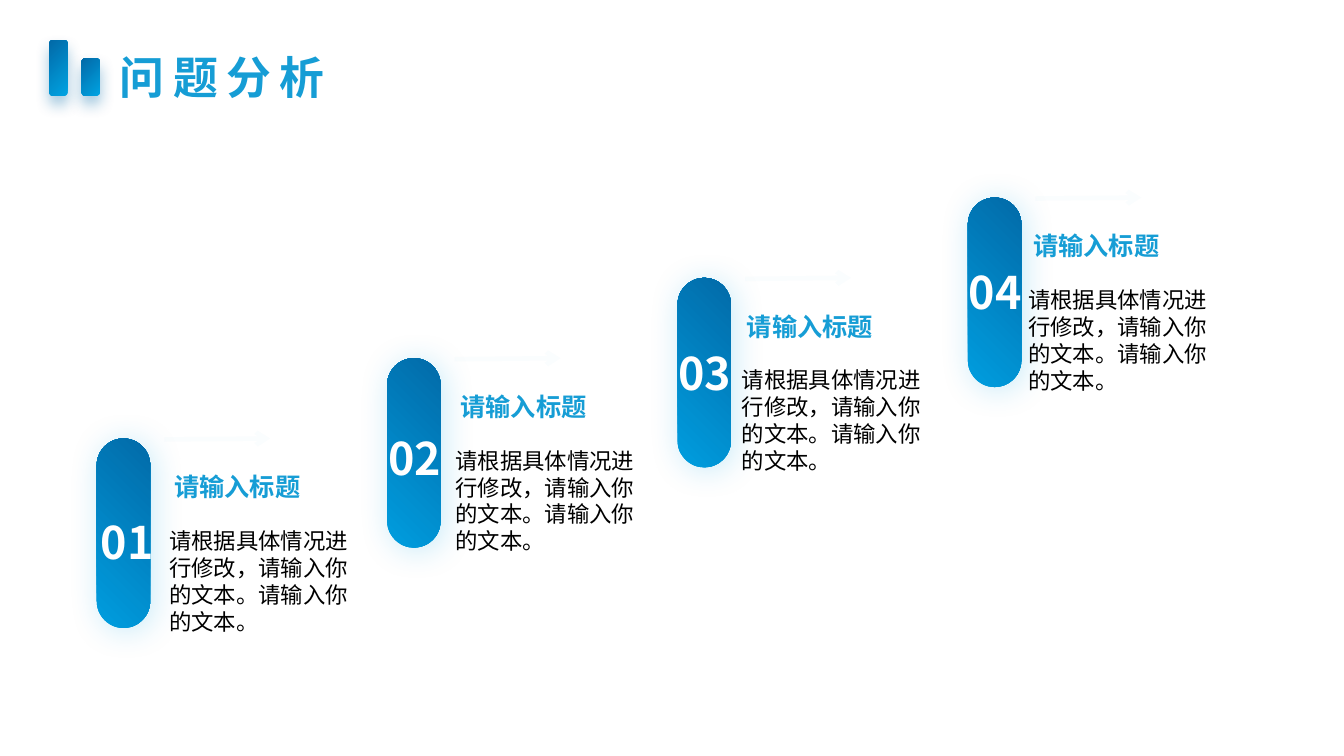
from lxml import etree
from pptx import Presentation
from pptx.dml.color import RGBColor
from pptx.enum.shapes import MSO_CONNECTOR, MSO_SHAPE
from pptx.enum.text import MSO_AUTO_SIZE
from pptx.oxml.ns import qn
from pptx.util import Inches, Pt

ROUNDED = MSO_SHAPE.ROUNDED_RECTANGLE
STRAIGHT = MSO_CONNECTOR.STRAIGHT
GROW = MSO_AUTO_SIZE.SHAPE_TO_FIT_TEXT
FONT = "Noto Sans CJK SC"

# Content
HEADING = "问题分析"
STEP_TITLE = "请输入标题"
STEP_BODY = "请根据具体情况进行修改，请输入你的文本。请输入你的文本。"
# Number, its left and top
STEPS = [("01", 0.9, 5.06), ("02", 3.75, 4.22), ("03", 6.63, 3.38), ("04", 9.51, 2.58)]
HEADING_BARS = [(0.49, 0.4, 0.18, 0.55), (0.81, 0.58, 0.18, 0.37)]

# Layout of the staircase
PILL_LEFT, PILL_TOP, PILL_PITCH = 0.96, 4.35, 2.88
TEXT_LEFT, TEXT_PITCH = 1.63, 2.84
RISE = 2.39 / (len(STEPS) - 1)

# Formats
HEADING_FONT = {"size": Pt(32), "bold": True, "color": "169DD5"}
NUMBER_FONT = {"size": Pt(32), "bold": True, "color": "FFFFFF"}
TITLE_FONT = {"size": Pt(18), "bold": True, "color": "169DD5"}
BODY_FONT = {"size": Pt(16), "bold": False, "color": "000000"}
PILL_STYLE = {"colors": ("009EDF", "026AA8"), "angle": 315, "radius": 0.5,
              "shadow": ("00A3E2", 21, 24, 3, 45)}
BAR_STYLE = {"colors": ("00A3E2", "026AA8"), "angle": 45, "radius": 0.1667,
             "shadow": ("026AA8", 40, 11, 6, 90)}
ARROW_COLOR, ARROW_OPACITY = "00A3E2", 2


def rgb(value):
    return RGBColor.from_string(value)


def add_child(parent, tag, **attributes):
    child = etree.SubElement(parent, qn(tag))
    for name, value in attributes.items():
        child.set(name, str(value))
    return child


def add_bar(slide, box, style, rotation=0):
    shape = slide.shapes.add_shape(ROUNDED, *map(Inches, box))
    shape.adjustments[0] = style["radius"]
    shape.rotation = rotation
    shape.line.fill.background()
    shape.fill.gradient()
    shape.fill.gradient_angle = 360 - style["angle"]
    for stop, color in zip(shape.fill.gradient_stops, style["colors"]):
        stop.color.rgb = rgb(color)
    # Soft outer shadow
    shape.shadow.inherit = False
    color, opacity, blur, distance, direction = style["shadow"]
    effects = shape._element.spPr.find(qn("a:effectLst"))
    shadow = add_child(effects, "a:outerShdw", blurRad=Pt(blur), dist=Pt(distance),
                       dir=direction * 60000, algn="ctr", rotWithShape=0)
    shadow_color = add_child(shadow, "a:srgbClr", val=color)
    add_child(shadow_color, "a:alpha", val=opacity * 1000)


def add_text(slide, box, text, font_values, wrap=False):
    text_box = slide.shapes.add_textbox(*map(Inches, box))
    frame = text_box.text_frame
    frame.word_wrap = wrap
    frame.auto_size = GROW
    run = frame.paragraphs[0].add_run()
    run.text = text
    run.font.name = FONT
    for name, value in font_values.items():
        if name == "color":
            run.font.color.rgb = rgb(value)
        else:
            setattr(run.font, name, value)
    properties = run._r.get_or_add_rPr()
    add_child(properties, "a:ea", typeface=FONT)
    return properties


def add_arrow(slide, left, top):
    ends = (left, top + 0.01, left + 1.05, top)
    arrow = slide.shapes.add_connector(STRAIGHT, *map(Inches, ends))
    arrow.line.width = Pt(3.25)
    arrow.line.color.rgb = rgb(ARROW_COLOR)
    line = arrow.line._get_or_add_ln()
    add_child(line.find(".//" + qn("a:srgbClr")), "a:alpha", val=ARROW_OPACITY * 1000)
    add_child(line, "a:tailEnd", type="arrow")
    add_child(arrow._element.spPr, "a:effectLst")


def main():
    presentation = Presentation()
    presentation.slide_width = Inches(13.33)
    presentation.slide_height = Inches(7.5)
    slide = presentation.slides.add_slide(presentation.slide_layouts[6])

    # Heading with its two bars
    heading = add_text(slide, (1.09, 0.44, 2.32, 0.64), HEADING, HEADING_FONT)
    heading.set("spc", "600")
    for box in HEADING_BARS:
        add_bar(slide, box, BAR_STYLE, rotation=180)

    # Rising steps
    for index, (number, number_left, number_top) in enumerate(STEPS):
        pill_left = PILL_LEFT + index * PILL_PITCH
        text_left = TEXT_LEFT + index * TEXT_PITCH
        top = PILL_TOP - index * RISE
        add_bar(slide, (pill_left, top, 0.53, 1.88), PILL_STYLE)
        add_arrow(slide, pill_left + 0.67, top)
        add_text(slide, (number_left, number_top, 0.75, 0.64), number, NUMBER_FONT)
        add_text(slide, (text_left, top + 0.28, 1.5, 0.4), STEP_TITLE, TITLE_FONT)
        add_text(slide, (text_left - 0.05, top + 0.83, 2.16, 1.18), STEP_BODY,
                 BODY_FONT, wrap=True)

    presentation.save("out.pptx")


if __name__ == "__main__":
    main()
